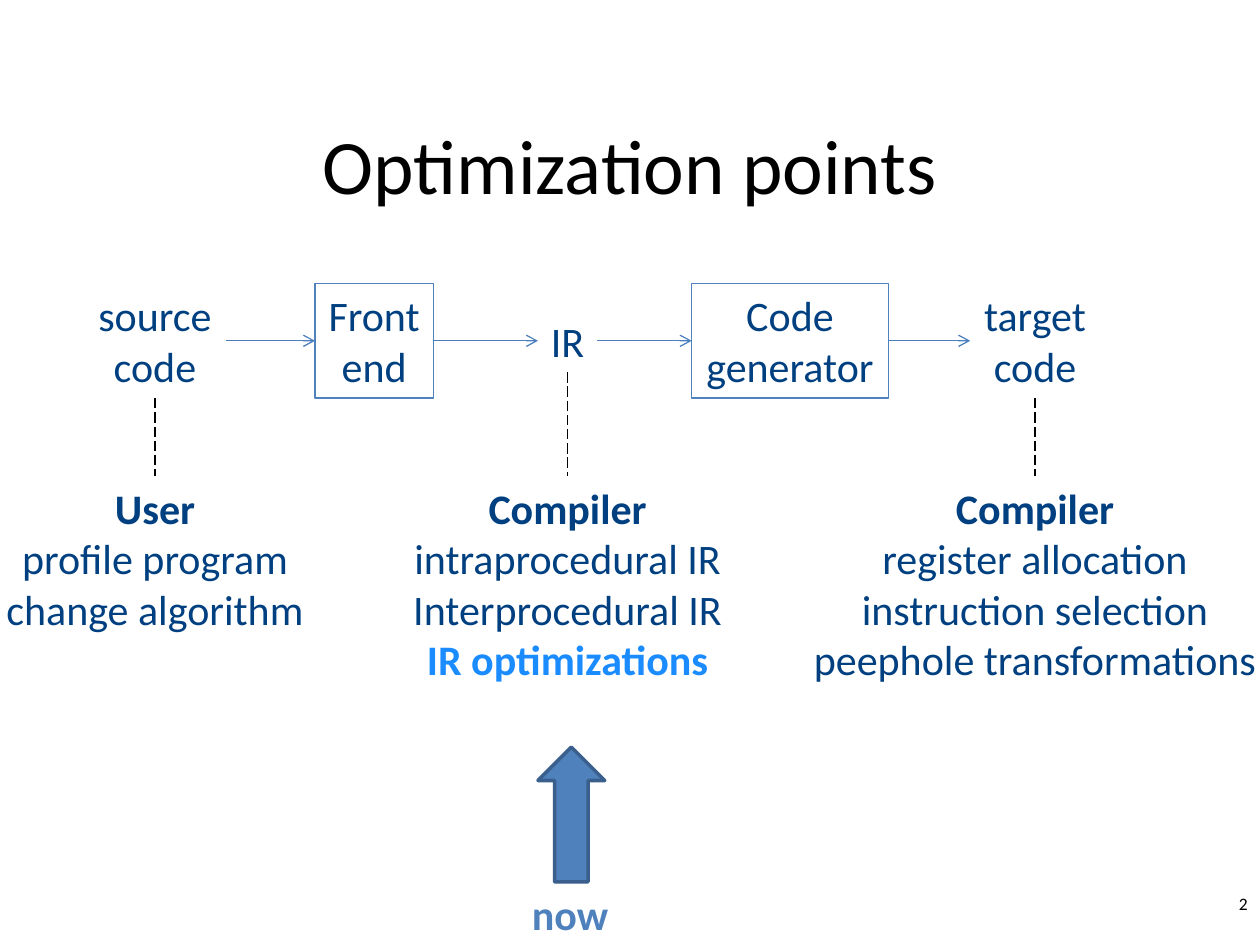
from dataclasses import dataclass

from lxml import etree
from pptx import Presentation
from pptx.dml.color import RGBColor
from pptx.enum.dml import MSO_LINE
from pptx.enum.shapes import MSO_CONNECTOR, MSO_SHAPE
from pptx.enum.text import MSO_ANCHOR, MSO_AUTO_SIZE, PP_ALIGN
from pptx.oxml.ns import qn
from pptx.util import Inches, Pt

CENTER, RIGHT = PP_ALIGN.CENTER, PP_ALIGN.RIGHT
MIDDLE = MSO_ANCHOR.MIDDLE
DASH = MSO_LINE.LONG_DASH
RECT, ARROW = MSO_SHAPE.RECTANGLE, MSO_SHAPE.UP_ARROW
STRAIGHT = MSO_CONNECTOR.STRAIGHT
TOP, LEFT, BOTTOM, RIGHT_SIDE = range(4)  # connection sites

COLORS = {"ink": "000000", "navy": "004080", "sky": "1A8CFF",
          "blue": "4F81BD", "flow": "4B7EBC", "edge": "3A5F8C"}
FONT = "Calibri"
COLS, ROWS = 100, 75  # square grid over the slide
CELL = 0.1            # inches
FLOW_MID = 27.05      # row through the middle of the flow
NOTE_ROW = 37.8


@dataclass
class Stage:
    text: str
    col: float
    wide: float
    high: float = 9.1
    boxed: bool = False


@dataclass
class Note:
    head: str
    paras: list[str]
    stage: int
    wide: float
    high: float
    key: str = ""


STAGES = [
    Stage("source\vcode", 6.7, 11.2),
    Stage("Front\vend", 25, 9.4, boxed=True),
    Stage("IR", 42.7, 4.7, high=5),
    Stage("Code\vgenerator", 54.9, 15.6, boxed=True),
    Stage("target\vcode", 77, 10.3),
]
NOTES = [
    Note("User", ["profile program\vchange algorithm"], 0, 25.9, 13.1),
    Note("Compiler", ["intraprocedural IR", "Interprocedural IR"],
         2, 27.2, 17.2, key="IR optimizations"),
    Note("Compiler", ["register allocation\vinstruction selection\v"
                      "peephole transformations"], 4, 37.7, 17.2),
]


def grid(*cells: float) -> list[int]:
    return [Inches(cell * CELL) for cell in cells]


def rgb(name: str) -> RGBColor:
    return RGBColor.from_string(COLORS[name])


def style(para, size: float, color: str, bold: bool | None = None,
          align=CENTER) -> None:
    para.alignment = align
    font = para.font
    font.name, font.size, font.bold = FONT, Pt(size), bold
    font.color.rgb = rgb(color)


def frame(shape, wrap: bool = False):
    body = shape.text_frame
    body.word_wrap = wrap
    if not wrap:
        body.auto_size = MSO_AUTO_SIZE.SHAPE_TO_FIT_TEXT
    return body


def label(shapes, text: str, area: tuple, size: float = 24,
          color: str = "navy", bold: bool | None = None,
          align=CENTER, wrap: bool = False):
    box = shapes.add_textbox(*grid(*area))
    para = frame(box, wrap).paragraphs[0]
    para.text = text
    style(para, size, color, bold, align)
    return box


def draw_stage(shapes, stage: Stage):
    area = (stage.col, FLOW_MID - stage.high / 2, stage.wide, stage.high)
    box = label(shapes, stage.text, area)
    if stage.boxed:
        box.line.color.rgb = rgb("blue")
        box.line.width = Pt(0.75)
    return box


def draw_note(shapes, note: Note):
    stage = STAGES[note.stage]
    left = stage.col + (stage.wide - note.wide) / 2
    box = shapes.add_textbox(*grid(left, NOTE_ROW, note.wide, note.high))
    body = frame(box)
    for index, text in enumerate(note.paras):
        para = body.add_paragraph() if index else body.paragraphs[0]
        style(para, 24, "navy")
        if index == 0:
            head = para.add_run()
            head.text, head.font.bold = note.head, True
            para.add_line_break()
        for row, line in enumerate(text.split("\v")):
            if row:
                para.add_line_break()
            para.add_run().text = line
    if note.key:
        para = body.add_paragraph()
        para.text = note.key
        style(para, 24, "sky", True)
    return box


def link(shapes, start, start_site: int, end, end_site: int,
         color: str, arrow: bool) -> None:
    line = shapes.add_connector(STRAIGHT, 0, 0, 0, 0)
    line.begin_connect(start, start_site)
    line.end_connect(end, end_site)
    line.line.color.rgb = rgb(color)
    line.line.width = Pt(0.75)
    props = line.line._get_or_add_ln()
    if arrow:
        etree.SubElement(props, qn("a:tailEnd"), type="arrow")
    else:
        line.line.dash_style = DASH
    etree.SubElement(line._element.spPr, qn("a:effectLst"))


def main() -> None:
    deck = Presentation()
    deck.slide_width, deck.slide_height = grid(COLS, ROWS)
    slide = deck.slides.add_slide(deck.slide_layouts[6])
    shapes = slide.shapes

    # Title
    title = label(shapes, "Optimization points", (7.5, 6.7, 85, 12.5),
                  44, "ink", wrap=True)
    title.text_frame.vertical_anchor = MIDDLE

    # Flow of compilation
    boxes = [draw_stage(shapes, stage) for stage in STAGES]
    for start, end in zip(boxes, boxes[1:]):
        link(shapes, start, RIGHT_SIDE, end, LEFT, "flow", True)

    # Who optimizes at each point
    for note in NOTES:
        box = draw_note(shapes, note)
        link(shapes, boxes[note.stage], BOTTOM, box, TOP, "ink", False)

    # Marker of the current topic
    mark = shapes.add_group_shape().shapes
    arrow = mark.add_shape(ARROW, *grid(42.7, 59.3, 5.3, 10.7))
    arrow.shadow.inherit = False
    arrow.fill.solid()
    arrow.fill.fore_color.rgb = rgb("blue")
    arrow.line.color.rgb = rgb("edge")
    arrow.line.width = Pt(2)
    label(mark, "now", (41.2, 70, 8.1, 5), color="blue", bold=True)

    # Slide number
    label(shapes, "2", (79.2, 70.4, 20.8, 3), 10, "ink",
          align=RIGHT, wrap=True)
    deck.save("out.pptx")


if __name__ == "__main__":
    main()
